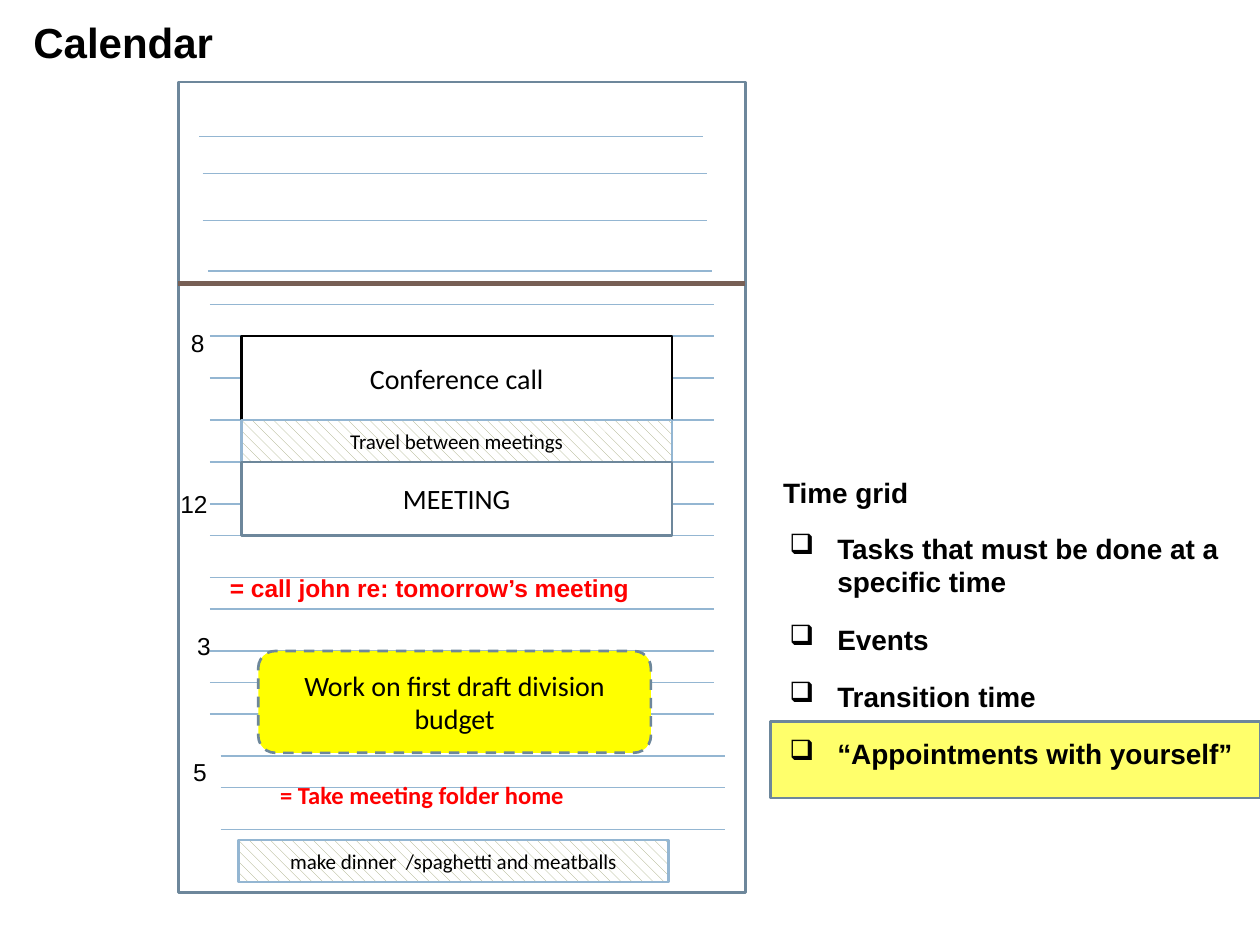
from lxml import etree
from pptx import Presentation
from pptx.dml.color import RGBColor
from pptx.enum.dml import MSO_LINE, MSO_PATTERN
from pptx.enum.shapes import MSO_CONNECTOR, MSO_SHAPE
from pptx.enum.text import MSO_ANCHOR, MSO_AUTO_SIZE, PP_ALIGN
from pptx.oxml.ns import qn
from pptx.util import Inches, Pt

BLACK = RGBColor(0x00, 0x00, 0x00)
WHITE = RGBColor(0xFF, 0xFF, 0xFF)
RED = RGBColor(0xFF, 0x00, 0x00)
YELLOW = RGBColor(0xFF, 0xFF, 0x00)
SLATE = RGBColor(0x6D, 0x87, 0x9B)
SKY = RGBColor(0x94, 0xB6, 0xD2)
BROWN = RGBColor(0x77, 0x5F, 0x55)
OLIVE = RGBColor(0x9F, 0xA5, 0x78)

# The page is laid out on a grid of twelve cells to the inch
CELL = Inches(1) / 12
PAGE_LEFT, PAGE_TOP, PAGE_WIDTH, PAGE_HEIGHT = 17, 7.8, 54, 77.2
DIVIDER_ROW = 27
RULE_WIDTH = 48
BLOCK_WIDTH = 41

# Ruled lines: left column and rows
RULES = [
    (20, (29, 32, 36, 40, 44, 48, 51, 55, 58, 62, 65, 68)),
    (21, (72, 75, 79)),
    (19, (13,)),
    (19.3, (16.5, 21)),
    (19.8, (25.8,)),
]
# Hour labels: text, column, row, width
HOURS = [("8", 17, 30.6, 3.7), ("12", 16, 46, 5), ("3", 17.6, 59.5, 3.7), ("5", 17.2, 71.5, 3.7)]
TIME_GRID_ITEMS = [
    ("Tasks that must be done at a specific time", 1),
    ("Events", 1.5),
    ("Transition time", 1.5),
    ("“Appointments with yourself”", 1.5),
]


def cells(*values):
    return [round(value * CELL) for value in values]


def add_run(paragraph, text, size, font_name, color=BLACK, bold=False):
    run = paragraph.add_run()
    run.text = text
    font = run.font
    font.size, font.name, font.bold = Pt(size), font_name, bold
    font.color.rgb = color


def add_rule(slide, column, row, width, color=SKY, weight=0.79):
    left, top, right = cells(column, row, column + width)
    line = slide.shapes.add_connector(MSO_CONNECTOR.STRAIGHT, left, top, right, top)
    line.line.color.rgb = color
    line.line.width = Pt(weight)
    etree.SubElement(line._element.spPr, qn("a:effectLst"))


def add_box(slide, column, row, width, height, fill=None, outline=SLATE,
            kind=MSO_SHAPE.RECTANGLE, text=None, size=16):
    shape = slide.shapes.add_shape(kind, *cells(column, row, width, height))
    shape.shadow.inherit = False
    if fill is None:
        shape.fill.background()
    else:
        shape.fill.solid()
        shape.fill.fore_color.rgb = fill
    shape.line.color.rgb = outline
    shape.line.width = Pt(1.5)
    if text:
        frame = shape.text_frame
        frame.word_wrap = True
        frame.vertical_anchor = MSO_ANCHOR.MIDDLE
        frame.paragraphs[0].alignment = PP_ALIGN.CENTER
        add_run(frame.paragraphs[0], text, size, "Calibri")
    return shape


def add_hatched_box(slide, column, row, text):
    shape = add_box(slide, column, row, BLOCK_WIDTH, 4, WHITE, SKY, text=text, size=12)
    shape.fill.patterned()
    shape.fill.pattern = MSO_PATTERN.DASHED_DOWNWARD_DIAGONAL
    shape.fill.fore_color.rgb = OLIVE
    shape.fill.back_color.rgb = WHITE


def add_label(slide, column, row, width, height, text, size=14, font_name="Arial",
              color=BLACK, bold=False, alignment=PP_ALIGN.LEFT):
    frame = slide.shapes.add_textbox(*cells(column, row, width, height)).text_frame
    frame.word_wrap = False
    frame.auto_size = MSO_AUTO_SIZE.SHAPE_TO_FIT_TEXT
    frame.paragraphs[0].alignment = alignment
    add_run(frame.paragraphs[0], text, size, font_name, color, bold)


def add_checklist(slide, column, row, width, height, items):
    frame = slide.shapes.add_textbox(*cells(column, row, width, height)).text_frame
    frame.word_wrap = True
    for index, (text, spacing) in enumerate(items):
        paragraph = frame.add_paragraph() if index else frame.paragraphs[0]
        paragraph.line_spacing = spacing
        paragraph.space_before = Pt(4)
        properties = paragraph._p.get_or_add_pPr()
        properties.set("marL", str(Inches(0.38)))
        properties.set("indent", str(-Inches(0.38)))
        etree.SubElement(properties, qn("a:buChar"), char="❑")
        add_run(paragraph, text, 16, "Arial", bold=True)


def set_opacity(shape, percent):
    color = shape.fill._xPr.find(qn("a:solidFill"))[0]
    etree.SubElement(color, qn("a:alpha"), val=str(percent * 1000))


def main():
    presentation = Presentation()
    presentation.slide_width, presentation.slide_height = Inches(10), Inches(7.5)
    slide = presentation.slides.add_slide(presentation.slide_layouts[6])

    # Highlight behind the last checklist item
    set_opacity(add_box(slide, 73.4, 68.7, 46.6, 7.3, YELLOW), 58)

    # Calendar page with its ruled lines
    add_box(slide, PAGE_LEFT, PAGE_TOP, PAGE_WIDTH, PAGE_HEIGHT)
    add_rule(slide, PAGE_LEFT, DIVIDER_ROW, PAGE_WIDTH, BROWN, 3)
    for column, rows in RULES:
        for row in rows:
            add_rule(slide, column, row, RULE_WIDTH)

    # Title and hours
    add_label(slide, 2, 1, 19.7, 6.1, "Calendar", 24, bold=True)
    for text, column, row, width in HOURS:
        add_label(slide, column, row, width, 4, text)

    # Scheduled blocks
    add_box(slide, 23, 32, BLOCK_WIDTH, 8, WHITE, BLACK, text="Conference call")
    add_hatched_box(slide, 23, 40, "Travel between meetings")
    add_box(slide, 23, 44, BLOCK_WIDTH, 7, WHITE, text="MEETING")
    appointment = add_box(slide, 24.6, 62, 37.4, 9.7, YELLOW, kind=MSO_SHAPE.ROUNDED_RECTANGLE,
                          text="Work on first draft division budget")
    appointment.line.dash_style = MSO_LINE.DASH
    add_hatched_box(slide, 22.7, 80, "make dinner  /spaghetti and meatballs")

    # Reminders
    add_label(slide, 20.7, 54, 40.7, 4, "= call john re: tomorrow’s meeting", color=RED, bold=True)
    add_label(slide, 23.5, 73.7, 33.4, 4, "= Take meeting folder home", font_name="Calibri",
              color=RED, bold=True, alignment=PP_ALIGN.CENTER)

    # Explanation of the time grid
    add_label(slide, 73.4, 44.7, 14.5, 4.4, "Time grid", 16, bold=True)
    add_checklist(slide, 74, 50, 45, 40, TIME_GRID_ITEMS)

    presentation.save("out.pptx")


if __name__ == "__main__":
    main()
